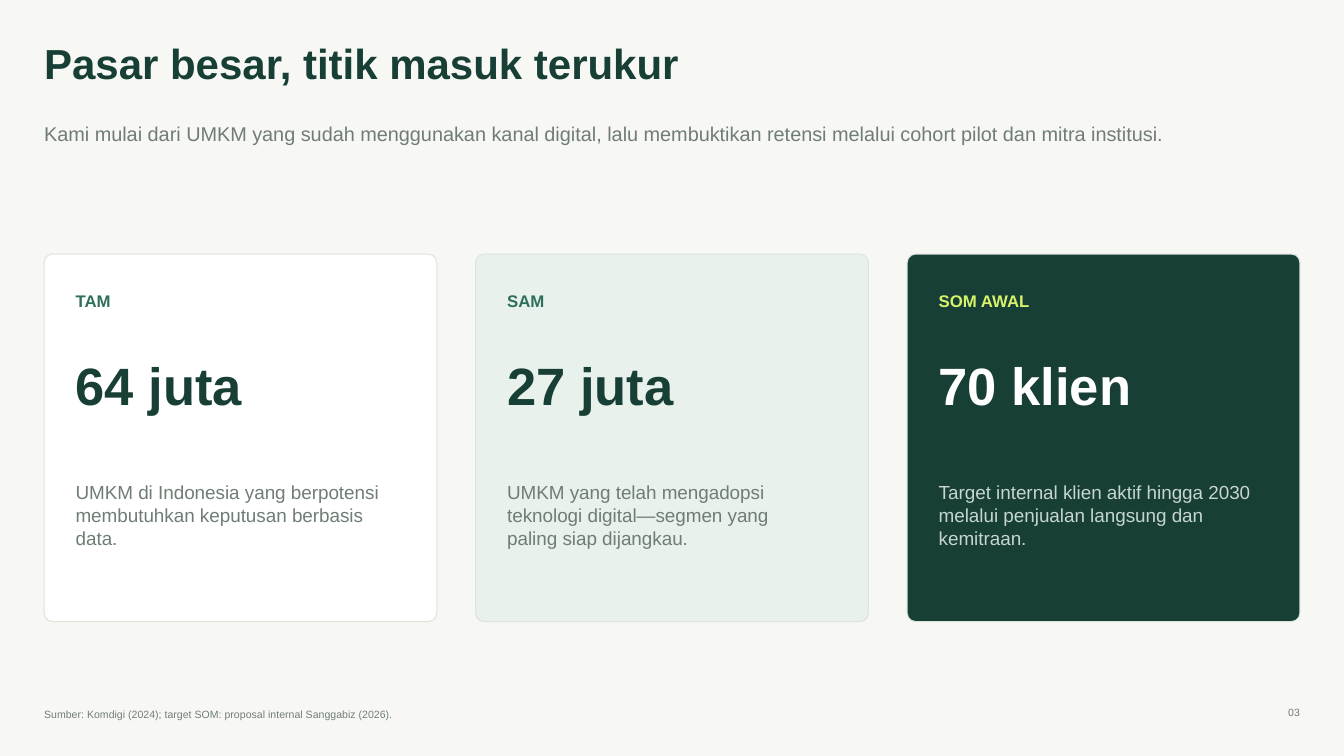
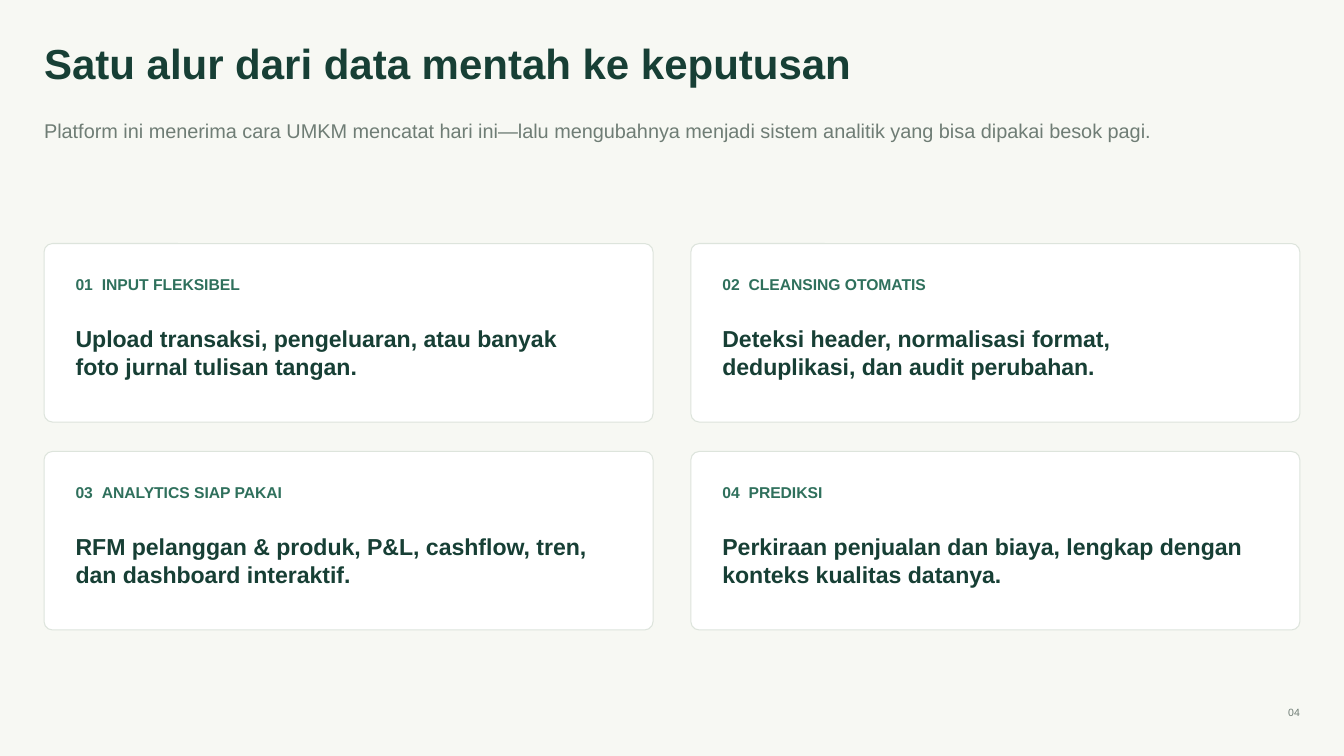
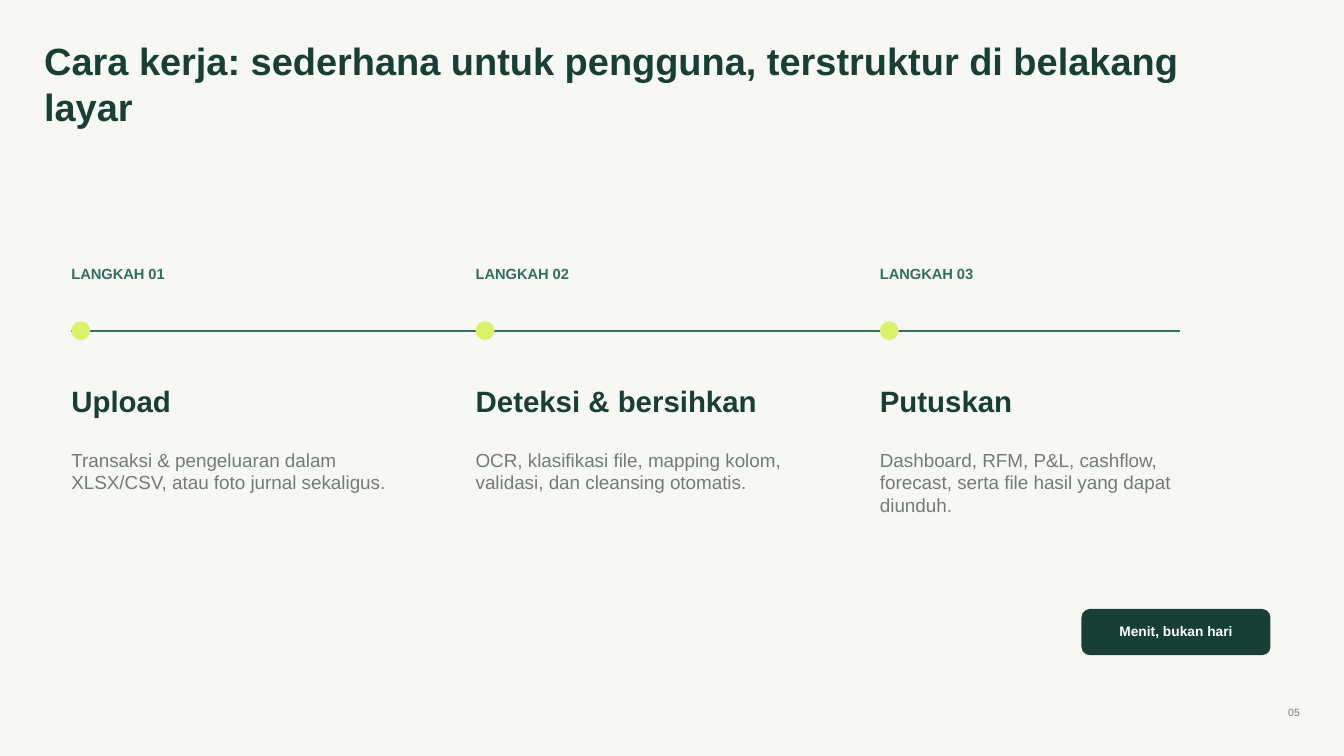
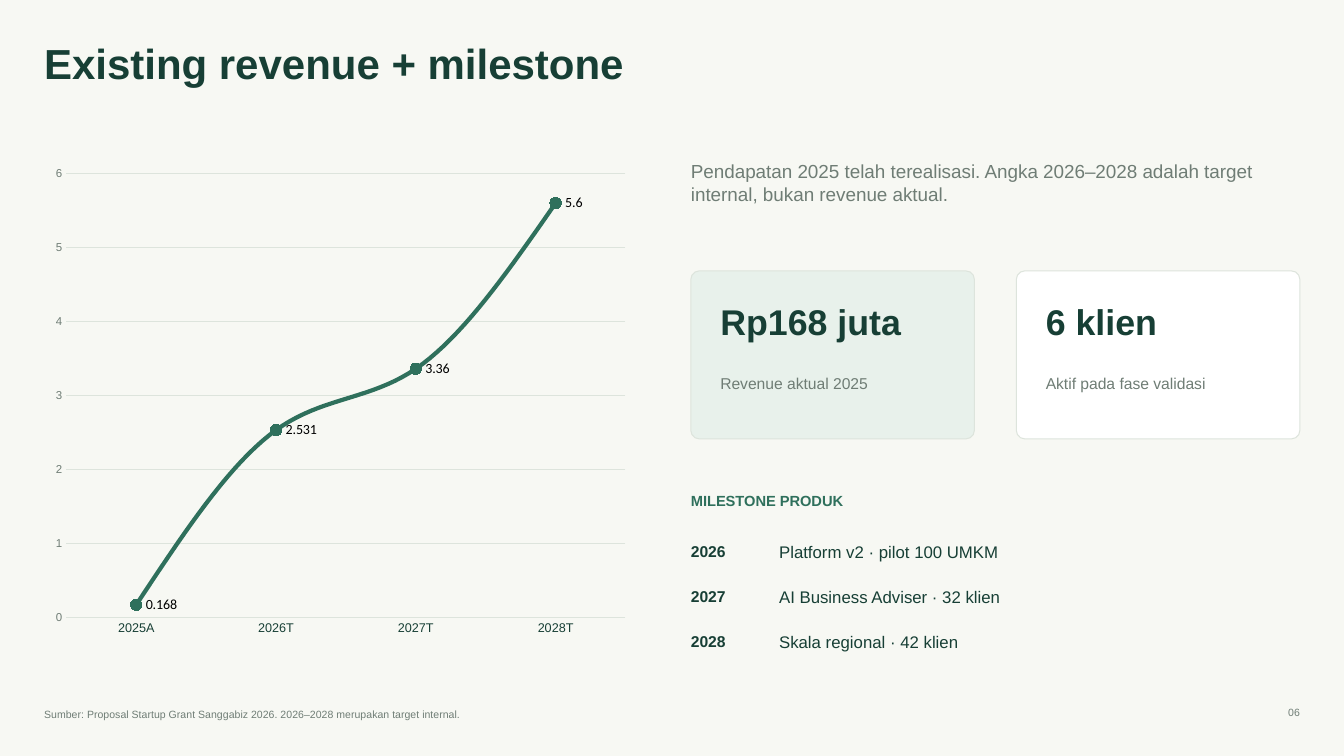
import dataclasses

import lxml.etree
import pptx
import pptx.chart.data
import pptx.dml.color
import pptx.enum.chart
import pptx.enum.shapes
import pptx.enum.text
import pptx.oxml.ns
import pptx.util


@dataclasses.dataclass(frozen=True)
class Theme:
    font: str = "Arial"
    plain: str = "Calibri"
    paper: str = "F7F8F3"
    white: str = "FFFFFF"
    black: str = "000000"
    mint: str = "E8F1EB"
    dark: str = "173F35"
    green: str = "2F705C"
    lime: str = "D8F26C"
    gray: str = "6F7D75"
    mist: str = "C6D5CF"
    edge: str = "DDE4DC"
    title: float = 30
    long: float = 27.1
    lead: float = 14.2
    huge: float = 37.5
    big: float = 25.5
    head: float = 21
    claim: float = 16.5
    body: float = 13.5
    label: float = 12
    small: float = 11.2
    step: float = 10.5
    pill: float = 9.8
    note: float = 7.5
    value: float = 10
    group: float = 9
    scale: float = 8.2


class Deck:
    cols = 128
    rows = 72
    left = 4.2
    right = 123.8
    round = 0.8

    def __init__(self, theme):
        self.theme = theme
        self.file = pptx.Presentation()
        self.file.slide_width = pptx.util.Inches(13.33)
        self.file.slide_height = pptx.util.Inches(7.5)
        self.paint(self.file.slide_master.background.fill, theme.paper)
        self.slide = None

    def tint(self, hue):
        return pptx.dml.color.RGBColor.from_string(hue)

    def paint(self, fill, hue):
        fill.solid()
        fill.fore_color.rgb = self.tint(hue)

    def place(self, x, y, w, h):
        wide = self.file.slide_width / self.cols
        high = self.file.slide_height / self.rows
        return [round(n) for n in (x * wide, y * high, w * wide, h * high)]

    def style(self, font, size, hue, bold=False, name=None):
        font.name = name or self.theme.font
        font.size = pptx.util.Pt(size)
        font.bold = bold
        font.color.rgb = self.tint(hue)

    def stroke(self, line, hue, width):
        line.color.rgb = self.tint(hue)
        line.width = pptx.util.Pt(width)

    def page(self, num, title, size=None, high=5.8, wide=117):
        theme = self.theme
        self.slide = self.file.slides.add_slide(self.file.slide_layouts[6])
        self.text(title, self.left, 3.6, wide, high, size or theme.title, theme.dark, True)
        self.text(num, self.right - 6.8, 67.2, 6.8, 1.8, theme.note, theme.gray, side="RIGHT")

    def source(self, words):
        self.text(words, self.left, 67.4, 104.5, 1.8, self.theme.note, self.theme.gray)

    def text(self, words, x, y, w, h, size, hue, bold=False, side=None, tab=None):
        box = self.slide.shapes.add_textbox(*self.place(x, y, w, h))
        frame = box.text_frame
        frame.word_wrap = True
        frame.margin_left = frame.margin_right = 0
        frame.margin_top = frame.margin_bottom = 0
        para = frame.paragraphs[0]
        if side:
            para.alignment = pptx.enum.text.PP_ALIGN[side]
        if tab:
            name = pptx.oxml.ns.qn
            props = para._p.get_or_add_pPr()
            stops = lxml.etree.SubElement(props, name("a:tabLst"))
            stop = lxml.etree.SubElement(stops, name("a:tab"))
            stop.set("pos", str(self.place(tab, 0, 0, 0)[0]))
            stop.set("algn", "l")
        run = para.add_run()
        run.text = words
        self.style(run.font, size, hue, bold)

    def shape(self, kind, x, y, w, h, hue, edge=None):
        form = self.slide.shapes.add_shape(
            pptx.enum.shapes.MSO_SHAPE[kind], *self.place(x, y, w, h)
        )
        form.shadow.inherit = False
        self.paint(form.fill, hue)
        if edge:
            self.stroke(form.line, edge, 0.75)
        else:
            form.line.fill.background()
        return form

    def card(self, x, y, w, h, hue, edge=None):
        form = self.shape("ROUNDED_RECTANGLE", x, y, w, h, hue, edge)
        form.adjustments[0] = self.round / min(w, h)

    def line(self, x, y, end, hue, width):
        start = self.place(x, y, 0, 0)[:2]
        stop = self.place(end, y, 0, 0)[:2]
        link = self.slide.shapes.add_connector(
            pptx.enum.shapes.MSO_CONNECTOR.STRAIGHT, *start, *stop
        )
        self.stroke(link.line, hue, width)
        props = link._element.spPr
        lxml.etree.SubElement(props, pptx.oxml.ns.qn("a:effectLst"))

    def curve(self, cats, vals, x, y, w, h):
        theme = self.theme
        enum = pptx.enum.chart
        data = pptx.chart.data.CategoryChartData()
        data.categories = cats
        data.add_series("Series 1", vals)
        chart = self.slide.shapes.add_chart(
            enum.XL_CHART_TYPE.LINE_MARKERS, *self.place(x, y, w, h), data
        ).chart
        chart.has_legend = chart.has_title = False
        self.style(chart.font, theme.value, theme.black, name=theme.plain)
        across, up = chart.category_axis, chart.value_axis
        for axis, size, hue, edge in (
            (across, theme.group, theme.dark, theme.edge),
            (up, theme.scale, theme.gray, theme.paper),
        ):
            axis.major_tick_mark = axis.minor_tick_mark = enum.XL_TICK_MARK.NONE
            self.style(axis.tick_labels.font, size, hue)
            self.stroke(axis.format.line, edge, 0.75)
        up.format.line.fill.background()
        up.minimum_scale, up.maximum_scale, up.major_unit = 0, 6, 1
        self.stroke(up.major_gridlines.format.line, theme.edge, 0.75)
        plot = chart.plots[0]
        plot.vary_by_categories = False
        row = plot.series[0]
        row.smooth = True
        self.stroke(row.format.line, theme.green, 3)
        row.marker.style = enum.XL_MARKER_STYLE.CIRCLE
        row.marker.size = 8
        self.paint(row.marker.format.fill, theme.green)
        self.stroke(row.marker.format.line, theme.green, 0.75)
        tags = row.data_labels
        tags.show_value = True
        tags.position = enum.XL_LABEL_POSITION.RIGHT
        self.style(tags.font, theme.value, theme.black, name=theme.plain)


def market(deck):
    theme = deck.theme
    deck.page("03", "Pasar besar, titik masuk terukur", high=6.2, wide=118)
    deck.text(
        "Kami mulai dari UMKM yang sudah menggunakan kanal digital, lalu membuktikan retensi melalui cohort pilot dan mitra institusi.",
        deck.left, 11.6, 115, 5.5, theme.lead, theme.gray,
    )
    cards = (
        ("TAM", "64 juta", "UMKM di Indonesia yang berpotensi membutuhkan keputusan berbasis data.",
         theme.white, theme.green, theme.dark, theme.gray),
        ("SAM", "27 juta", "UMKM yang telah mengadopsi teknologi digital—segmen yang paling siap dijangkau.",
         theme.mint, theme.green, theme.dark, theme.gray),
        ("SOM AWAL", "70 klien", "Target internal klien aktif hingga 2030 melalui penjualan langsung dan kemitraan.",
         theme.dark, theme.lime, theme.white, theme.mist),
    )
    wide, top = 37.4, 24.2
    pitch = (deck.right - deck.left - wide) / 2
    for i, (label, sum, body, fill, tone, main, soft) in enumerate(cards):
        x = deck.left + i * pitch
        deck.card(x, top, wide, 35, fill, theme.edge)
        deck.text(label, x + 3, top + 3.5, 18, 3, theme.label, tone, True)
        deck.text(sum, x + 3, top + 9.4, 30, 8.6, theme.huge, main, True)
        deck.text(body, x + 3, top + 21.6, 29.8, 9.4, theme.body, soft)
    deck.source("Sumber: Komdigi (2024); target SOM: proposal internal Sanggabiz (2026).")


def flow(deck):
    theme = deck.theme
    deck.page("04", "Satu alur dari data mentah ke keputusan", wide=118)
    deck.text(
        "Platform ini menerima cara UMKM mencatat hari ini—lalu mengubahnya menjadi sistem analitik yang bisa dipakai besok pagi.",
        deck.left, 11.3, 115, 5.5, theme.lead, theme.gray,
    )
    cards = (
        ("INPUT FLEKSIBEL", "Upload transaksi, pengeluaran, atau banyak foto jurnal tulisan tangan."),
        ("CLEANSING OTOMATIS", "Deteksi header, normalisasi format, deduplikasi, dan audit perubahan."),
        ("ANALYTICS SIAP PAKAI", "RFM pelanggan & produk, P&L, cashflow, tren, dan dashboard interaktif."),
        ("PREDIKSI", "Perkiraan penjualan dan biaya, lengkap dengan konteks kualitas datanya."),
    )
    wide = 58
    for i, (label, body) in enumerate(cards):
        row, col = divmod(i, 2)
        x = deck.left + col * (deck.right - deck.left - wide)
        y = 23.2 + row * 19.8
        deck.card(x, y, wide, 17, theme.white, theme.edge)
        deck.text(f"{i + 1:02}\t{label}", x + 3, y + 3, 50, 2.5, theme.small, theme.green, True, tab=2.5)
        deck.text(body, x + 3, y + 7.7, 50, 6.2, theme.claim, theme.dark, True)


def steps(deck):
    theme = deck.theme
    deck.page("05", "Cara kerja: sederhana untuk pengguna, terstruktur di belakang layar",
              theme.long, 7.4)
    start, pitch, dot, mid = 6.8, 38.5, 1.8, 31.5
    deck.line(start, mid, 112.4, theme.green, 1.5)
    parts = (
        ("Upload", 30, "Transaksi & pengeluaran dalam XLSX/CSV, atau foto jurnal sekaligus.", 30),
        ("Deteksi & bersihkan", 32, "OCR, klasifikasi file, mapping kolom, validasi, dan cleansing otomatis.", 30),
        ("Putuskan", 30, "Dashboard, RFM, P&L, cashflow, forecast, serta file hasil yang dapat diunduh.", 33),
    )
    for i, (head, wide, body, span) in enumerate(parts):
        x = start + i * pitch
        deck.shape("OVAL", x, mid - dot / 2, dot, dot, theme.lime)
        deck.text(f"LANGKAH {i + 1:02}", x, 25.2, 18, 2.6, theme.step, theme.green, True)
        deck.text(head, x, 36.5, wide, 4.2, theme.head, theme.dark, True)
        deck.text(body, x, 42.7, span, 10, theme.body, theme.gray)
    deck.card(103, 58, 18, 4.4, theme.dark)
    deck.text("Menit, bukan hari", 104.4, 59.3, 15.2, 1.8, theme.pill, theme.white, True, "CENTER")


def growth(deck):
    theme = deck.theme
    deck.page("06", "Existing revenue + milestone")
    half = 65.8
    deck.text(
        "Pendapatan 2025 telah terealisasi. Angka 2026–2028 adalah target internal, bukan revenue aktual.",
        half, 15.2, 56, 5.8, theme.body, theme.gray,
    )
    cards = (
        ("Rp168 juta", "Revenue aktual 2025", theme.mint),
        ("6 klien", "Aktif pada fase validasi", theme.white),
    )
    wide, top = 27, 25.8
    for i, (sum, label, fill) in enumerate(cards):
        x = half + i * (deck.right - half - wide)
        deck.card(x, top, wide, 16, fill, theme.edge)
        deck.text(sum, x + 2.8, top + 2.8, 21.8, 5.2, theme.big, theme.dark, True)
        deck.text(label, x + 2.8, top + 9.8, 21.8, 2.8, theme.small, theme.gray)
    deck.text("MILESTONE PRODUK", half, 46.8, 56, 2.5, theme.step, theme.green, True)
    goals = (
        ("2026", "Platform v2 · pilot 100 UMKM"),
        ("2027", "AI Business Adviser · 32 klien"),
        ("2028", "Skala regional · 42 klien"),
    )
    for i, (year, goal) in enumerate(goals):
        y = 51.6 + i * 4.3
        deck.text(year, half, y, 7.8, 2.5, theme.small, theme.dark, True)
        deck.text(goal, half + 8.4, y, 44, 2.8, theme.label, theme.dark)
    deck.source("Sumber: Proposal Startup Grant Sanggabiz 2026. 2026–2028 merupakan target internal.")
    deck.curve(
        ("2025A", "2026T", "2027T", "2028T"), (0.168, 2.531, 3.36, 5.6),
        deck.left, 15, 56.5, 46.5,
    )


def main():
    deck = Deck(Theme())
    for build in (market, flow, steps, growth):
        build(deck)
    deck.file.save("out.pptx")


if __name__ == "__main__":
    main()
